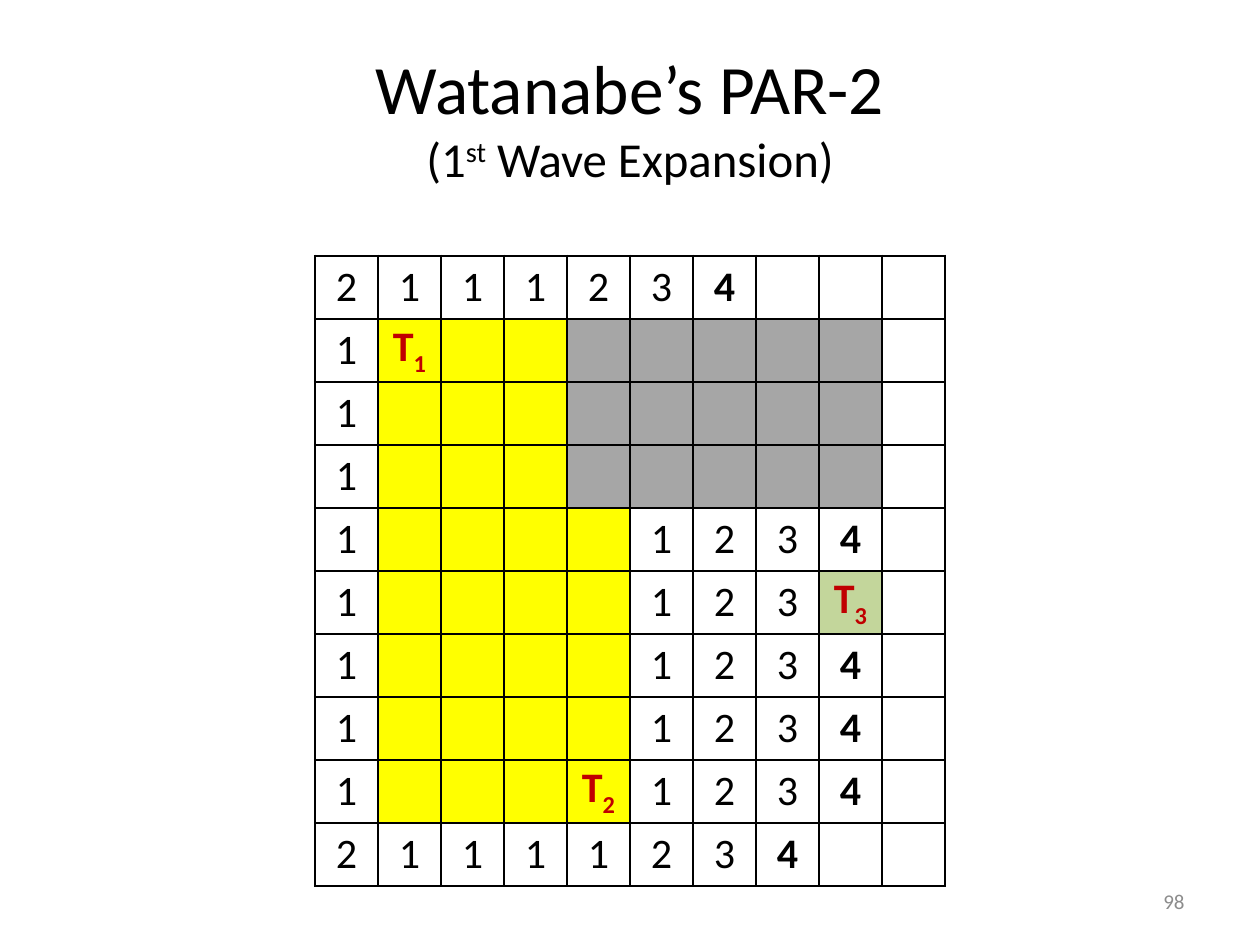
from dataclasses import dataclass

from lxml import etree
from pptx import Presentation
from pptx.dml.color import RGBColor
from pptx.enum import text
from pptx.oxml import ns
from pptx.util import Inches, Pt


@dataclass(frozen=True)
class Theme:
    font: str = "Calibri"
    ink: str = "000000"
    pin: str = "C00000"
    free: str = "FFFFFF"
    wave: str = "FFFF00"
    block: str = "A6A6A6"
    goal: str = "C3D69B"
    muted: str = "8C8C8C"
    title: float = 39.6
    sub: float = 27.9
    cell: float = 24
    note: float = 12
    line: float = 1.5


THEME = Theme()
SIDE = 0.5

# Y: connected area, #: obstacle, G: target, .: not reached, digits: wave steps
GRID = [
    "2111234...",
    *["1YYY#####."] * 3,
    "1YYYY1234.",
    "1YYYY123G.",
    *["1YYYY1234."] * 3,
    "21111234..",
]
FILLS = {"Y": THEME.wave, "#": THEME.block, "G": THEME.goal}
PINS = {(1, 1): "1", (8, 4): "2", (5, 8): "3"}
FRONT = "4"


def add_run(para, words, size, color=THEME.ink, bold=False, shift=0):
    """Add a run; shift raises or lowers it, in percent."""
    run = para.add_run()
    run.text = words
    font = run.font
    font.name, font.size, font.bold = THEME.font, Pt(size), bold
    font.color.rgb = RGBColor.from_string(color)
    if shift:
        run._r.get_or_add_rPr().set("baseline", str(shift * 1000))


def add_title(slide):
    title = slide.shapes.title
    title.left, title.top = Inches(0.5), Inches(0.3)
    title.width, title.height = Inches(9), Inches(1.25)
    frame = title.text_frame
    frame.auto_size = text.MSO_AUTO_SIZE.NONE
    frame.vertical_anchor = text.MSO_ANCHOR.MIDDLE
    para = frame.paragraphs[0]
    para.alignment = text.PP_ALIGN.CENTER
    add_run(para, "Watanabe’s PAR-2", THEME.title)
    para.add_line_break()
    size = str(round(THEME.title * 100))
    etree.SubElement(para._p[-1], ns.qn("a:rPr"), sz=size)
    add_run(para, "(1", THEME.sub)
    add_run(para, "st", THEME.sub, shift=30)
    add_run(para, " Wave Expansion)", THEME.sub)


def set_edges(cell):
    props = cell._tc.get_or_add_tcPr()
    for side in "LRTB":
        line = etree.SubElement(props, ns.qn(f"a:ln{side}"), w=str(Pt(THEME.line)))
        fill = etree.SubElement(line, ns.qn("a:solidFill"))
        etree.SubElement(fill, ns.qn("a:srgbClr"), val=THEME.ink)


def fill_cell(cell, mark, pin):
    set_edges(cell)
    cell.fill.solid()
    cell.fill.fore_color.rgb = RGBColor.from_string(FILLS.get(mark, THEME.free))
    cell.margin_left = cell.margin_right = cell.margin_top = cell.margin_bottom = 0
    cell.vertical_anchor = text.MSO_ANCHOR.MIDDLE
    para = cell.text_frame.paragraphs[0]
    para.alignment = text.PP_ALIGN.CENTER
    if pin:
        add_run(para, "T", THEME.cell, THEME.pin, True)
        add_run(para, pin, THEME.cell, THEME.pin, True, -25)
    elif mark.isdigit():
        add_run(para, mark, THEME.cell, bold=mark == FRONT)


def add_grid(slide):
    count = len(GRID)
    span = Inches(count * SIDE)
    table = slide.shapes.add_table(
        count, count, Inches(2.5), Inches(2.03), span, span
    ).table
    table.first_row = table.horz_banding = False
    for line in [*table.rows]:
        line.height = Inches(SIDE)
    for line in table.columns:
        line.width = Inches(SIDE)
    for row, marks in enumerate(GRID):
        for col, mark in enumerate(marks):
            fill_cell(table.cell(row, col), mark, PINS.get((row, col)))


def add_number(slide):
    box = slide.shapes.add_textbox(
        Inches(7.17), Inches(6.95), Inches(2.33), Inches(0.4)
    )
    frame = box.text_frame
    frame.word_wrap = True
    frame.vertical_anchor = text.MSO_ANCHOR.MIDDLE
    para = frame.paragraphs[0]
    para.alignment = text.PP_ALIGN.RIGHT
    add_run(para, "98", THEME.note, THEME.muted)


def main():
    deck = Presentation()
    deck.slide_width, deck.slide_height = Inches(10), Inches(7.5)
    slide = deck.slides.add_slide(deck.slide_layouts[5])
    add_title(slide)
    add_grid(slide)
    add_number(slide)
    deck.save("out.pptx")


if __name__ == "__main__":
    main()
